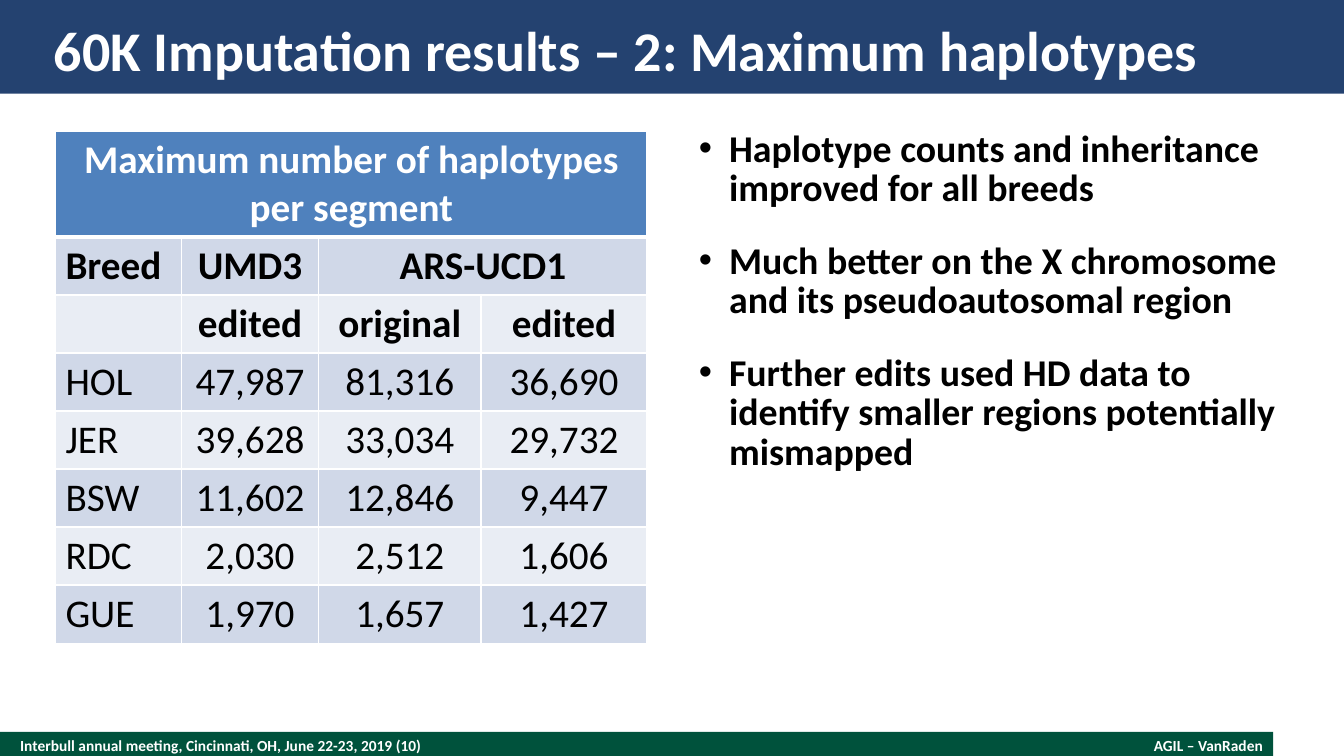
import pptx
import pptx.util
import pptx.dml.color
import pptx.enum.shapes
import pptx.enum.text
import pptx.oxml
import pptx.oxml.ns
from lxml import etree

Pt = pptx.util.Pt
ALIGN = pptx.enum.text.PP_ALIGN
ANCHOR = pptx.enum.text.MSO_ANCHOR
COLORS = {
    "navy": "244270", "green": "00523C", "white": "FFFFFF", "black": "000000",
    "header": "4F81BD", "dark_band": "D0D8E8", "light_band": "E9EDF4",
}


def add_text(paragraph, text, size, color, bold=True):
    run = paragraph.add_run()
    run.text = text
    run.font.name = "Calibri"
    run.font.size = Pt(size)
    run.font.bold = bold
    run.font.color.rgb = pptx.dml.color.RGBColor.from_string(COLORS[color])


def prepare_frame(shape, anchor):
    frame = shape.text_frame
    frame.word_wrap = True
    frame.auto_size = pptx.enum.text.MSO_AUTO_SIZE.NONE
    frame.vertical_anchor = anchor
    frame.margin_left = frame.margin_right = frame.margin_top = frame.margin_bottom = 0
    return frame


presentation = pptx.Presentation()
presentation.slide_width = Pt(960)
presentation.slide_height = Pt(540)
slide = presentation.slides.add_slide(presentation.slide_layouts[5])

bars = [("green", 522.7, 909.4, 19.4), ("navy", 0, 960, 67)]
for color, top, width, height in bars:
    bar = slide.shapes.add_shape(
        pptx.enum.shapes.MSO_SHAPE.RECTANGLE, 0, Pt(top), Pt(width), Pt(height))
    bar.shadow.inherit = False
    bar.fill.solid()
    bar.fill.fore_color.rgb = pptx.dml.color.RGBColor.from_string(COLORS[color])
    bar.line.fill.background()

footers = [
    ("Interbull annual meeting, Cincinnati, OH, June 22-23, 2019 (10)", 14.4, 522.7, 624, 19.4, ALIGN.LEFT),
    ("AGIL – VanRaden", 691.2, 525.6, 211, 13.7, ALIGN.RIGHT),
]
for text, left, top, width, height, alignment in footers:
    footer = slide.shapes.add_textbox(Pt(left), Pt(top), Pt(width), Pt(height))
    paragraph = prepare_frame(footer, ANCHOR.MIDDLE).paragraphs[0]
    paragraph.alignment = alignment
    add_text(paragraph, text, 11, "white")

title = slide.shapes.title
title.left, title.top, title.width, title.height = Pt(38.4), Pt(9.6), Pt(883.2), Pt(50.4)
title.element.getparent().append(title.element)
paragraph = prepare_frame(title, ANCHOR.MIDDLE).paragraphs[0]
paragraph.alignment = ALIGN.LEFT
add_text(paragraph, "60K Imputation results – 2: Maximum haplotypes", 40, "white")

findings = [
    "Haplotype counts and inheritance improved for all breeds",
    "Much better on the X chromosome and its pseudoautosomal region",
    "Further edits used HD data to identify smaller regions potentially mismapped",
]
body = slide.shapes.add_textbox(Pt(499.2), Pt(93.6), Pt(422.4), Pt(403.2))
frame = prepare_frame(body, ANCHOR.TOP)
for index, finding in enumerate(findings):
    paragraph = frame.add_paragraph() if index else frame.paragraphs[0]
    properties = paragraph._p.get_or_add_pPr()
    properties.set("marL", str(Pt(21.6)))
    properties.set("indent", str(-Pt(21.6)))
    bullet_font = etree.SubElement(properties, pptx.oxml.ns.qn("a:buFont"))
    bullet_font.set("typeface", "Arial")
    bullet = etree.SubElement(properties, pptx.oxml.ns.qn("a:buChar"))
    bullet.set("char", "•")
    paragraph.line_spacing = Pt(28)
    paragraph.space_after = Pt(24)
    add_text(paragraph, finding, 27, "black")

rows = [
    ["Maximum number of haplotypes per segment", "", "", ""],
    ["Breed", "UMD3", "ARS-UCD1", ""],
    ["", "edited", "original", "edited"],
    ["HOL", "47,987", "81,316", "36,690"],
    ["JER", "39,628", "33,034", "29,732"],
    ["BSW", "11,602", "12,846", "9,447"],
    ["RDC", "2,030", "2,512", "1,606"],
    ["GUE", "1,970", "1,657", "1,427"],
]
column_widths = [90, 98, 116, 118.6]
table = slide.shapes.add_table(
    len(rows), len(column_widths), Pt(39.6), Pt(93.6), Pt(422.6), Pt(365.4)).table
for column, width in zip(table.columns, column_widths):
    column.width = Pt(width)
table.cell(0, 0).merge(table.cell(0, 3))
table.cell(1, 2).merge(table.cell(1, 3))

for row_index, values in enumerate(rows):
    is_header = row_index == 0
    table.rows[row_index].height = Pt(75.6 if is_header else 41.4)
    band = "header" if is_header else "dark_band" if row_index % 2 else "light_band"
    border_widths = {"lnL": 1, "lnR": 1, "lnT": 3 if row_index == 1 else 1, "lnB": 3 if is_header else 1}
    for column_index, value in enumerate(values):
        cell = table.cell(row_index, column_index)
        cell_properties = cell._tc.get_or_add_tcPr()
        for side, width in border_widths.items():
            cell_properties.append(pptx.oxml.parse_xml(
                f'<a:{side} {pptx.oxml.ns.nsdecls("a")} w="{Pt(width)}"><a:solidFill>'
                f'<a:srgbClr val="{COLORS["white"]}"/></a:solidFill></a:{side}>'))
        cell.fill.solid()
        cell.fill.fore_color.rgb = pptx.dml.color.RGBColor.from_string(COLORS[band])
        if value:
            paragraph = cell.text_frame.paragraphs[0]
            centered = is_header or column_index > 0
            paragraph.alignment = ALIGN.CENTER if centered else ALIGN.LEFT
            add_text(paragraph, value, 28, "white" if is_header else "black", row_index < 3)

presentation.save("out.pptx")
